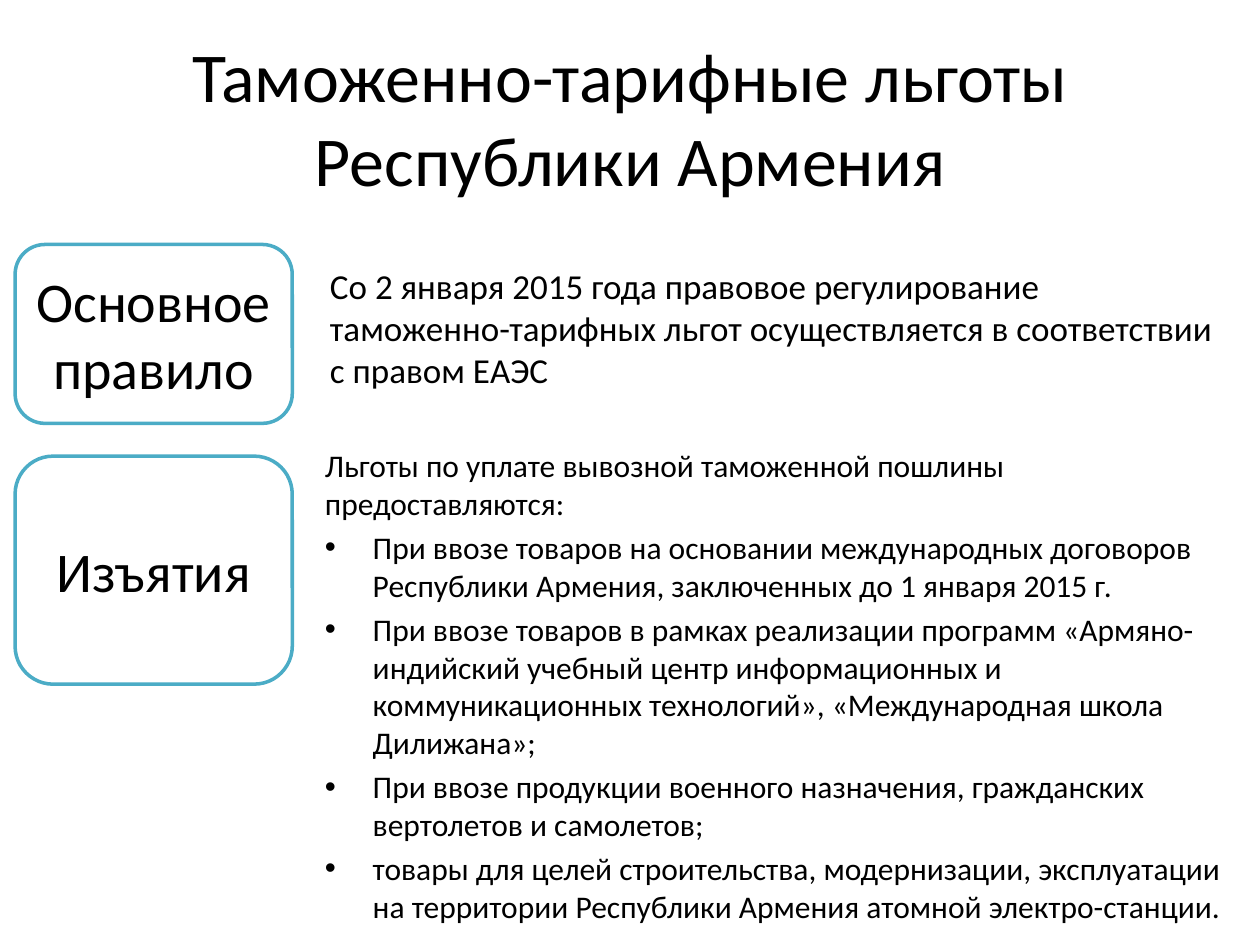
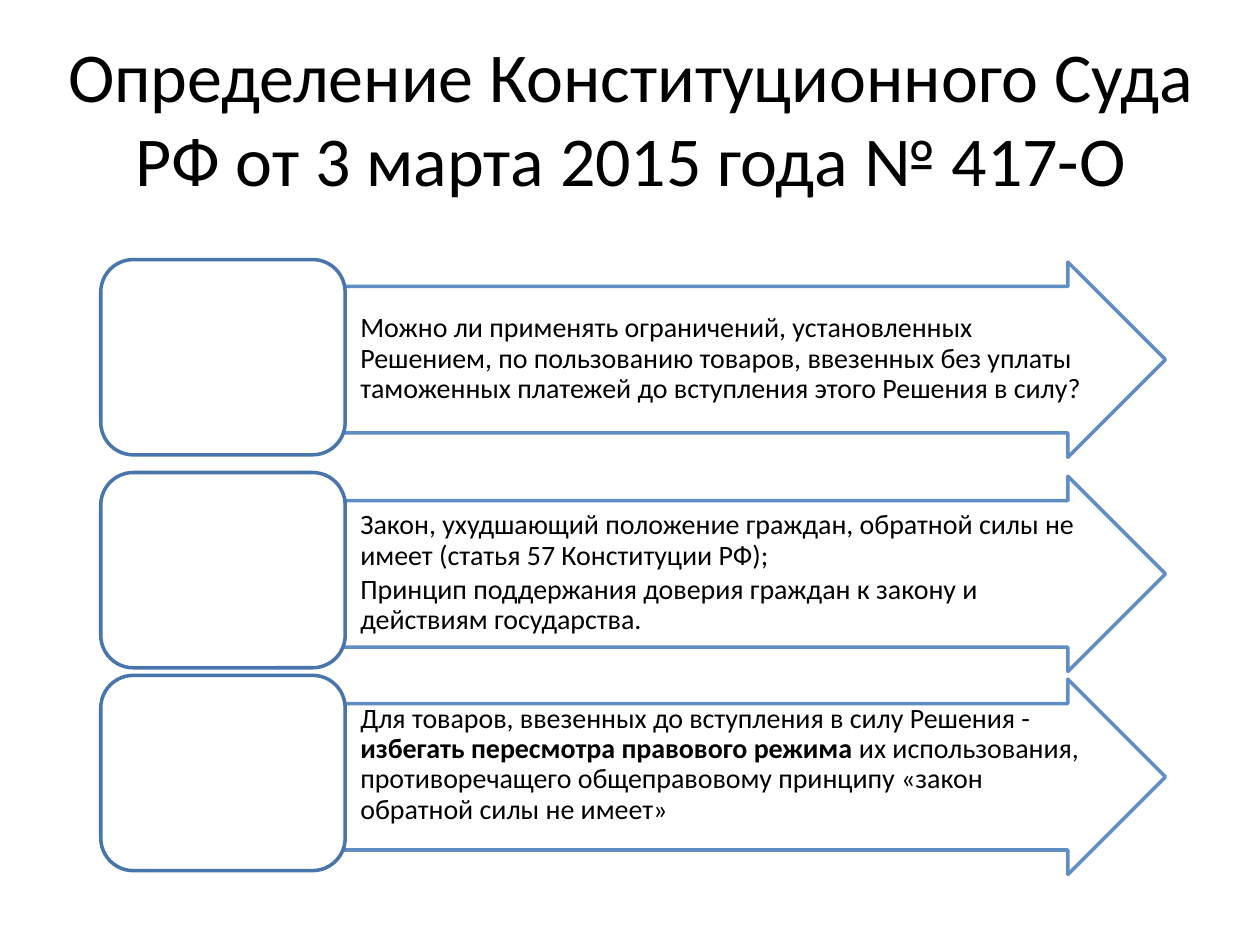
from lxml import etree
from pptx import Presentation
from pptx.dml.color import RGBColor
from pptx.enum.shapes import MSO_SHAPE
from pptx.enum.text import MSO_ANCHOR, PP_ALIGN
from pptx.oxml.ns import qn
from pptx.util import Inches, Pt

ROUNDED, ARROW = MSO_SHAPE.ROUNDED_RECTANGLE, MSO_SHAPE.RIGHT_ARROW
TOP, MIDDLE = MSO_ANCHOR.TOP, MSO_ANCHOR.MIDDLE
LEFT, CENTER = PP_ALIGN.LEFT, PP_ALIGN.CENTER
TITLE_ONLY = 5
FONT = "Calibri"
COLORS = {"text": "000000", "fill": "FFFFFF", "label": "4BACC6",
          "arrow": "4F81BD", "box": "4875AC"}

RULE = ("Со 2 января 2015 года правовое регулирование таможенно-тарифных льгот "
        "осуществляется в соответствии с правом ЕАЭС")
EXEMPTIONS_INTRO = "Льготы по уплате вывозной таможенной пошлины предоставляются:"
EXEMPTIONS = [
    "При ввозе товаров на основании международных договоров Республики Армения, "
    "заключенных до 1 января 2015 г.",
    "При ввозе товаров в рамках реализации программ «Армяно-индийский учебный центр "
    "информационных и коммуникационных технологий», «Международная школа Дилижана»;",
    "При ввозе продукции военного назначения, гражданских вертолетов и самолетов;",
    "товары для целей строительства, модернизации, эксплуатации на территории "
    "Республики Армения атомной электро-станции.",
]
RULING_STEPS = [
    (2.06, 0.02, MIDDLE, [
        "Можно ли применять ограничений, установленных Решением, по пользованию товаров, "
        "ввезенных без уплаты таможенных платежей до вступления этого Решения в силу?"]),
    (3.75, 0.03, MIDDLE, [
        "Закон, ухудшающий положение граждан, обратной силы не имеет "
        "(статья 57 Конституции РФ);",
        "Принцип поддержания доверия граждан к закону и действиям государства."]),
    (5.36, 0.03, TOP, [
        [("Для товаров, ввезенных до вступления в силу Решения - ", False),
         ("избегать пересмотра правового режима ", True),
         ("их использования, противоречащего общеправовому принципу "
          "«закон обратной силы не имеет»", False)]]),
]


class Deck:
    """Holds the shared style and the current slide."""

    def __init__(self):
        self.presentation = Presentation()
        self.presentation.slide_width = Inches(10)
        self.presentation.slide_height = Inches(7.5)
        self.slide = None

    def color(self, name):
        return RGBColor.from_string(COLORS[name])

    def new_slide(self, title, left, width):
        layout = self.presentation.slide_layouts[TITLE_ONLY]
        self.slide = self.presentation.slides.add_slide(layout)
        heading = self.slide.shapes.title
        place = {"left": left, "top": 0.3, "width": width, "height": 1.25}
        for side, inches in place.items():
            setattr(heading, side, Inches(inches))
        self.fill_text(heading.text_frame, [title], 40, CENTER)

    def fill_text(self, frame, paragraphs, size, align=LEFT, anchor=MIDDLE, **spacing):
        frame.word_wrap = True
        frame.vertical_anchor = anchor
        for index, content in enumerate(paragraphs):
            paragraph = frame.paragraphs[0] if index == 0 else frame.add_paragraph()
            for name, value in {"alignment": align, **spacing}.items():
                setattr(paragraph, name, value)
            runs = [(content, False)] if isinstance(content, str) else content
            for text, bold in runs:
                run = paragraph.add_run()
                run.text = text
                for name, value in {"name": FONT, "size": Pt(size), "bold": bold}.items():
                    setattr(run.font, name, value)
                run.font.color.rgb = self.color("text")

    def text(self, place, paragraphs, size, margin=None, indent=0, **style):
        box = self.slide.shapes.add_textbox(*map(Inches, place))
        frame = box.text_frame
        if margin is not None:
            for side in ("left", "top", "right", "bottom"):
                setattr(frame, f"margin_{side}", Inches(margin))
            frame.margin_left = Inches(margin + indent)
        self.fill_text(frame, paragraphs, size, **style)
        return frame

    def bullet(self, paragraph, indent):
        properties = paragraph._p.get_or_add_pPr()
        properties.set("marL", str(Inches(indent)))
        properties.set("indent", str(-Inches(indent)))
        etree.SubElement(properties, qn("a:buFont"), typeface="Arial")
        etree.SubElement(properties, qn("a:buChar"), char="•")

    def shape(self, kind, place, line, label=None, opacity=100):
        shape = self.slide.shapes.add_shape(kind, *map(Inches, place))
        shape.shadow.inherit = False
        shape.fill.solid()
        shape.fill.fore_color.rgb = self.color("fill")
        shape.line.color.rgb = self.color(line)
        shape.line.width = Pt(2)
        if opacity < 100:
            for tint in shape._element.spPr.iter(qn("a:srgbClr")):
                etree.SubElement(tint, qn("a:alpha"), val=str(opacity * 1000))
        if label:
            self.fill_text(shape.text_frame, [label], 32, CENTER)
        return shape


def build_benefits(deck):
    deck.new_slide("Таможенно-тарифные льготы Республики Армения", 0.5, 9)
    deck.text((2.52, 1.84, 7.22, 1.52), [RULE], 20, space_before=Pt(4))
    deck.shape(ROUNDED, (0.12, 1.94, 2.2, 1.42), "label", "Основное правило")
    deck.shape(ROUNDED, (0.12, 3.62, 2.2, 1.81), "label", "Изъятия")
    exemptions = deck.text((2.48, 3.51, 7.38, 3.86), [EXEMPTIONS_INTRO, *EXEMPTIONS],
                           18, space_before=Pt(3.6))
    for paragraph in exemptions.paragraphs[1:]:
        deck.bullet(paragraph, 0.38)


def build_ruling(deck):
    deck.new_slide("Определение Конституционного Суда РФ от 3 марта 2015 года № 417-О",
                   0.2, 9.61)
    for box_top, arrow_drop, anchor, paragraphs in RULING_STEPS:
        arrow_top = box_top + arrow_drop
        arrow = deck.shape(ARROW, (2.66, arrow_top, 6.59, 1.55), "arrow", opacity=90)
        arrow.adjustments[0] = 0.75
        deck.text((2.66, arrow_top + 0.19, 6.01, 1.16), paragraphs, 16, margin=0.01,
                  indent=0.19, anchor=anchor, line_spacing=0.9, space_after=Pt(2.4))
        deck.shape(ROUNDED, (0.8, box_top, 1.94, 1.55), "box")


def main():
    deck = Deck()
    build_benefits(deck)
    build_ruling(deck)
    deck.presentation.save("out.pptx")


if __name__ == "__main__":
    main()
